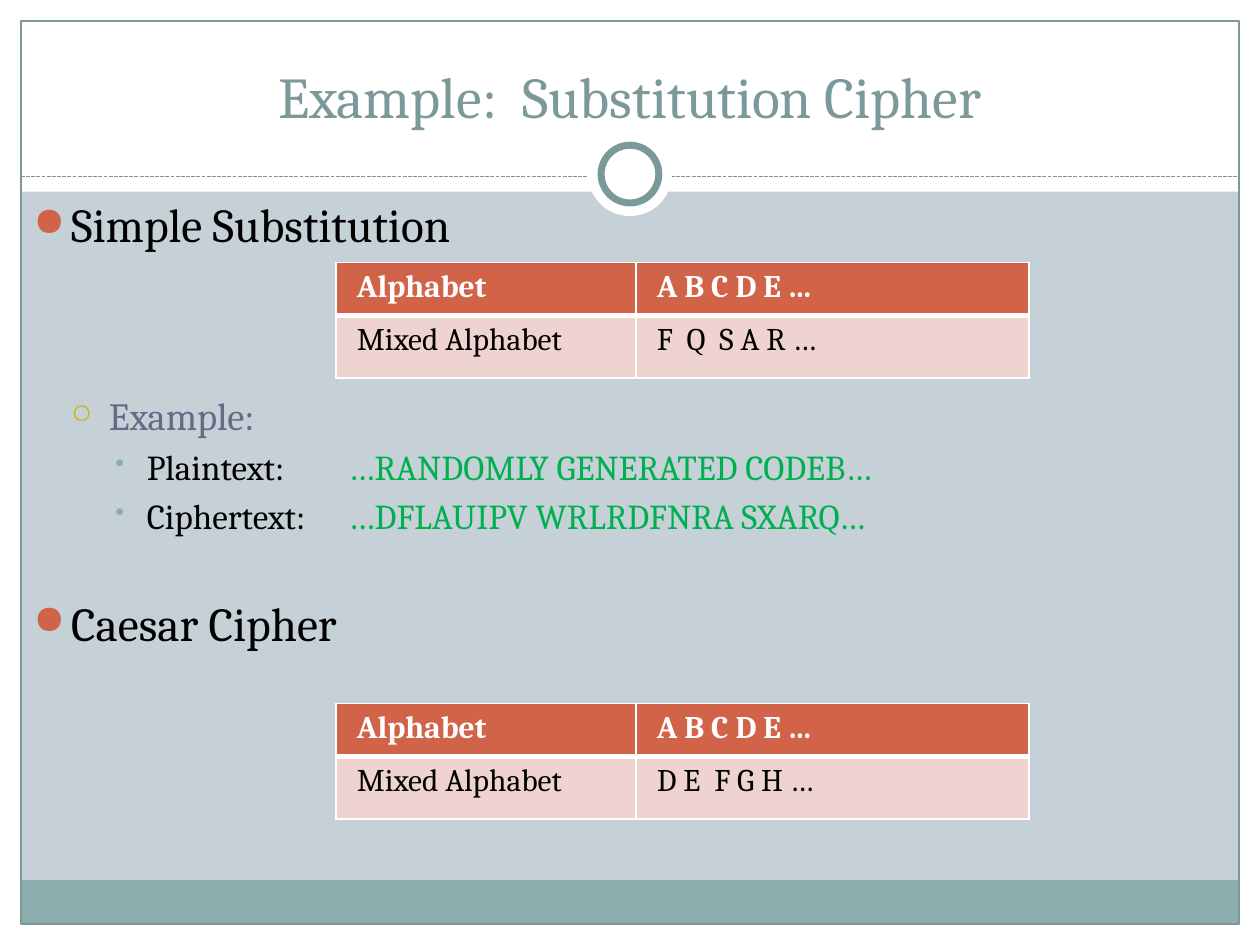
import lxml.etree
import pptx
import pptx.dml.color
import pptx.enum.dml
import pptx.enum.shapes
import pptx.enum.text
import pptx.oxml.ns
import pptx.util

Pt = pptx.util.Pt
Color = pptx.dml.color.RGBColor
Shape = pptx.enum.shapes.MSO_SHAPE
qualify = pptx.oxml.ns.qn

WHITE = Color(0xFF, 0xFF, 0xFF)
BLACK = Color(0, 0, 0)
BACKGROUND = Color(0xC5, 0xD1, 0xD7)
TEAL = Color(0x8C, 0xAD, 0xAE)
SLATE = Color(0x7C, 0x99, 0x9A)
RUST = Color(0xD1, 0x63, 0x49)
PINK = Color(0xEE, 0xD3, 0xD0)
OLIVE = Color(0xCC, 0xB4, 0x00)
INDIGO = Color(0x64, 0x6B, 0x86)
GREEN = Color(0x00, 0xB0, 0x50)

FONT = "Cambria"
WIDTH, HEIGHT, MARGIN = 720, 540, 12
TITLE = "Example:  Substitution Cipher"

# kind, left, top, width, height, fill, line, line width
FRAME = [
    (Shape.RECTANGLE, 0, HEIGHT - MARGIN, WIDTH, MARGIN, WHITE, None, 0),
    (Shape.RECTANGLE, 0, 0, WIDTH, 109.5, WHITE, None, 0),
    (Shape.RECTANGLE, 0, 0, MARGIN, HEIGHT, WHITE, None, 0),
    (Shape.RECTANGLE, WIDTH - MARGIN, 0, MARGIN, HEIGHT, WHITE, None, 0),
    (Shape.RECTANGLE, MARGIN, 503, WIDTH - 2 * MARGIN, 25, TEAL, None, 0),
    (Shape.RECTANGLE, MARGIN, MARGIN, WIDTH - 2 * MARGIN, HEIGHT - 2 * MARGIN, None, SLATE, 0.75),
]
DIVIDER_TOP = 100.8
RINGS = [(48, WHITE, None, 0), (33, WHITE, SLATE, 4)]
RING_CENTER = 99.5

LEVELS = [
    {"bullet": "●", "color": RUST, "percent": 85, "left": 21.6, "hang": 21.6, "size": 27},
    {"bullet": "○", "color": OLIVE, "percent": 70, "left": 43.2, "hang": 21.6, "size": 22},
    {"bullet": "•", "color": TEAL, "percent": 75, "left": 64.8, "hang": 18, "size": 20},
]
OUTLINE = [
    (0, 5.4, [("Simple Substitution", BLACK)]),
    (1, 80, [("Example:", INDIGO)]),
    (2, 4, [("Plaintext: \t", BLACK), ("…RANDOMLY GENERATED CODEB…", GREEN)]),
    (2, 4, [("Ciphertext:", BLACK), ("\t…DFLAUIPV WRLRDFNRA SXARQ…", GREEN)]),
    (0, 33, [("Caesar Cipher", BLACK)]),
]

TABLES = [(150, "F  Q  S A R …"), (402, "D E  F G H …")]
TABLE_LEFT = 192
COLUMNS = [171.4, 224.6]
ROWS = [30.3, 35.7]
ROW_STYLES = [
    {"fill": RUST, "color": WHITE, "bold": True, "borders": {"L": 1, "R": 1, "T": 1, "B": 3}},
    {"fill": PINK, "color": BLACK, "bold": False, "borders": {"L": 1, "R": 1, "T": 3, "B": 1}},
]


def apply(target, values):
    for name, value in values.items():
        setattr(target, name, value)


def add_span(para, text, size, color, bold=False):
    span = para.add_run()
    span.text = text
    apply(span.font, {"name": FONT, "size": Pt(size), "bold": bold})
    span.font.color.rgb = color


def add_shape(page, kind, left, top, width, height, fill, line, line_width):
    shape = page.shapes.add_shape(kind, Pt(left), Pt(top), Pt(width), Pt(height))
    shape.shadow.inherit = False
    if fill is None:
        shape.fill.background()
    else:
        shape.fill.solid()
        shape.fill.fore_color.rgb = fill
    if line is None:
        shape.line.fill.background()
    else:
        shape.line.color.rgb = line
        shape.line.width = Pt(line_width)


def add_frame(page):
    for part in FRAME:
        add_shape(page, *part)
    divider = page.shapes.add_connector(
        pptx.enum.shapes.MSO_CONNECTOR.STRAIGHT,
        Pt(MARGIN), Pt(DIVIDER_TOP), Pt(WIDTH - MARGIN), Pt(DIVIDER_TOP))
    divider.line.color.rgb = SLATE
    apply(divider.line, {"width": Pt(0.75), "dash_style": pptx.enum.dml.MSO_LINE.SQUARE_DOT})
    properties = divider.element.find(qualify("p:spPr"))
    lxml.etree.SubElement(properties, qualify("a:effectLst"))
    for size, *style in RINGS:
        add_shape(page, Shape.OVAL, (WIDTH - size) / 2, RING_CENTER - size / 2, size, size, *style)


def place_title(page):
    title = page.shapes.title
    apply(title, {"left": Pt(24), "top": Pt(18), "width": Pt(672), "height": Pt(60)})
    apply(title.text_frame, {"vertical_anchor": pptx.enum.text.MSO_ANCHOR.BOTTOM, "word_wrap": True})
    para = title.text_frame.paragraphs[0]
    para.alignment = pptx.enum.text.PP_ALIGN.CENTER
    add_span(para, TITLE, 33, SLATE)
    title.element.getparent().append(title.element)


def add_bullet(para, level):
    properties = para._p.get_or_add_pPr()
    properties.set("marL", str(Pt(level["left"])))
    properties.set("indent", str(-Pt(level["hang"])))
    color = lxml.etree.SubElement(properties, qualify("a:buClr"))
    lxml.etree.SubElement(color, qualify("a:srgbClr"), val=str(level["color"]))
    lxml.etree.SubElement(properties, qualify("a:buSzPct"), val=str(level["percent"] * 1000))
    lxml.etree.SubElement(properties, qualify("a:buChar"), char=level["bullet"])


def add_outline(page):
    box = page.shapes.add_textbox(Pt(MARGIN), Pt(108), Pt(WIDTH - 2 * MARGIN), Pt(420))
    frame = box.text_frame
    frame.word_wrap = True
    for index, (depth, gap, spans) in enumerate(OUTLINE):
        para = frame.add_paragraph() if index else frame.paragraphs[0]
        apply(para, {"level": depth, "space_before": Pt(gap)})
        add_bullet(para, LEVELS[depth])
        for text, color in spans:
            add_span(para, text, LEVELS[depth]["size"], color)


def format_cell(cell, text, style):
    apply(cell, {"margin_left": Pt(12), "margin_right": Pt(12),
                 "margin_top": Pt(3.6), "margin_bottom": Pt(3.6)})
    properties = cell._tc.get_or_add_tcPr()
    for side, width in style["borders"].items():
        border = lxml.etree.SubElement(properties, qualify("a:ln" + side), w=str(Pt(width)))
        fill = lxml.etree.SubElement(border, qualify("a:solidFill"))
        lxml.etree.SubElement(fill, qualify("a:srgbClr"), val=str(WHITE))
    cell.fill.solid()
    cell.fill.fore_color.rgb = style["fill"]
    add_span(cell.text_frame.paragraphs[0], text, 18, style["color"], style["bold"])


def add_cipher_table(page, top, mixed):
    content = [("Alphabet", "A B C D E …"), ("Mixed Alphabet", mixed)]
    table = page.shapes.add_table(
        len(ROWS), len(COLUMNS), Pt(TABLE_LEFT), Pt(top), Pt(sum(COLUMNS)), Pt(sum(ROWS))).table
    for column, width in zip(table.columns, COLUMNS):
        column.width = Pt(width)
    for row, height, texts, style in zip(table.rows, ROWS, content, ROW_STYLES):
        row.height = Pt(height)
        for cell, text in zip(row.cells, texts):
            format_cell(cell, text, style)


def main():
    deck = pptx.Presentation()
    apply(deck, {"slide_width": Pt(WIDTH), "slide_height": Pt(HEIGHT)})
    page = deck.slides.add_slide(deck.slide_layouts[5])
    page.background.fill.solid()
    page.background.fill.fore_color.rgb = BACKGROUND
    add_frame(page)
    place_title(page)
    add_outline(page)
    for top, mixed in TABLES:
        add_cipher_table(page, top, mixed)
    deck.save("out.pptx")


if __name__ == "__main__":
    main()
